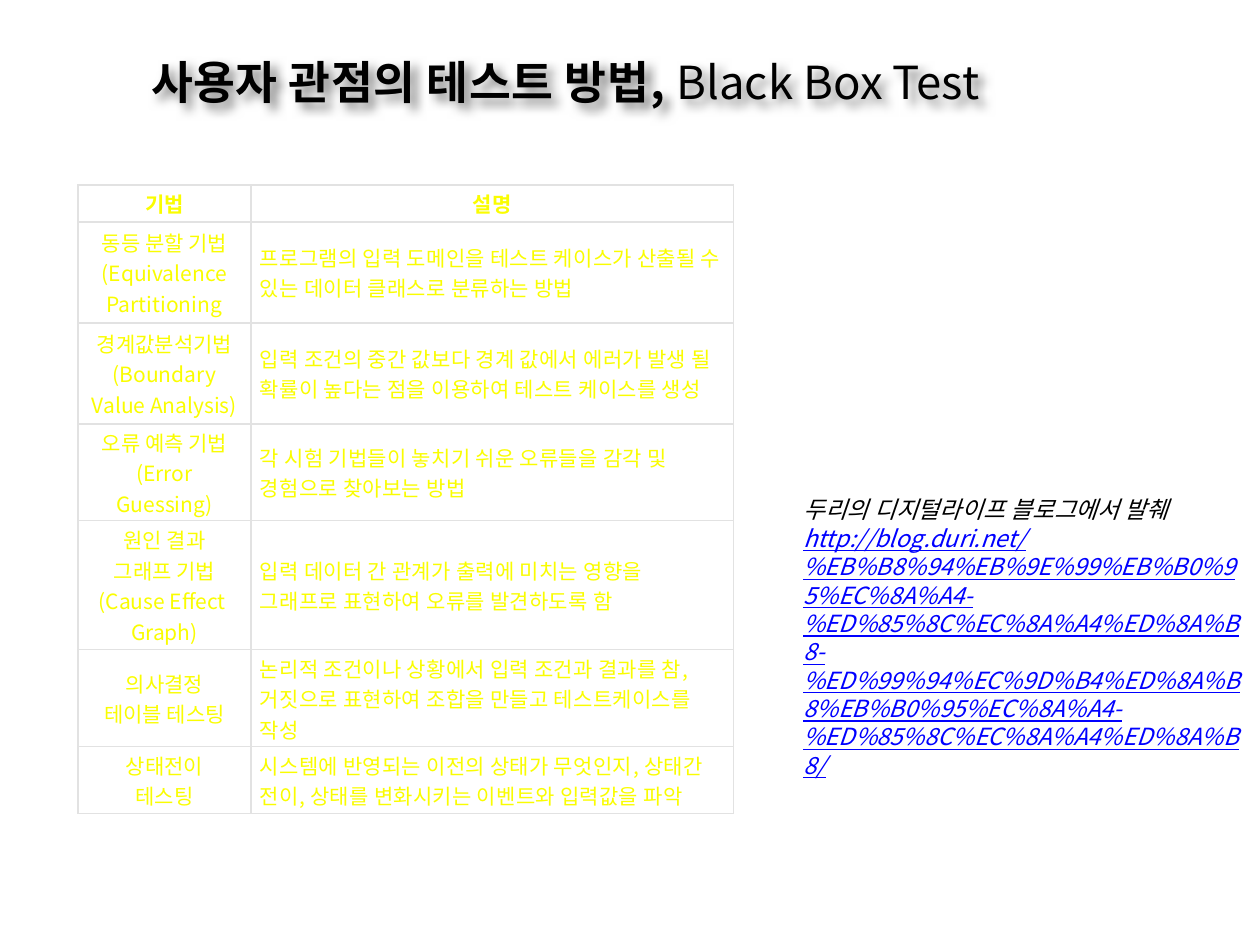
from dataclasses import dataclass

from lxml import etree
from pptx import Presentation
from pptx import util as u
from pptx.dml.color import RGBColor
from pptx.enum import text
from pptx.oxml import ns

PX = 914400 / 126
FONT = "Noto Sans CJK KR"
BLACK, YELLOW, BLUE, WHITE, BORDER = "000000", "FAFD00", "0000FF", "FFFFFF", "E2E2E2"
CENTER, LEFT = text.PP_ALIGN.CENTER, text.PP_ALIGN.LEFT


@dataclass
class Technique:
    name: str
    description: str
    height: int
    heading: bool = False


TECHNIQUES = [
    Technique("기법", "설명", 37, heading=True),
    Technique("동등 분할 기법\n(Equivalence\nPartitioning",
              "프로그램의 입력 도메인을 테스트 케이스가 산출될 수 있는 데이터 클래스로 분류하는 방법", 101),
    Technique("경계값분석기법\n(Boundary\nValue Analysis)",
              "입력 조건의 중간 값보다 경계 값에서 에러가 발생 될 확률이 높다는 점을 이용하여 테스트 케이스를 생성", 101),
    Technique("오류 예측 기법\n(Error Guessing)",
              "각 시험 기법들이 놓치기 쉬운 오류들을 감각 및 경험으로 찾아보는 방법", 97),
    Technique("원인 결과\n그래프 기법\n(Cause Effect \nGraph)",
              "입력 데이터 간 관계가 출력에 미치는 영향을 그래프로 표현하여 오류를 발견하도록 함", 129),
    Technique("의사결정\n테이블 테스팅",
              "논리적 조건이나 상황에서 입력 조건과 결과를 참, 거짓으로 표현하여 조합을 만들고 테스트케이스를 작성", 97),
    Technique("상태전이\n테스팅",
              "시스템에 반영되는 이전의 상태가 무엇인지, 상태간 전이, 상태를 변화시키는 이벤트와 입력값을 파악", 67),
]
COLUMNS = [173, 483]
SOURCE_URL = (
    "http://blog.duri.net/\n%EB%B8%94%EB%9E%99%EB%B0%95%EC%8A%A4-"
    "%ED%85%8C%EC%8A%A4%ED%8A%B8-%ED%99%94%EC%9D%B4%ED%8A%B8%EB%B0%95%EC%8A%A4-"
    "%ED%85%8C%EC%8A%A4%ED%8A%B8/"
)


def px(length: int) -> u.Emu:
    return u.Emu(round(length * PX))


def color(value: str) -> RGBColor:
    return RGBColor.from_string(value)


def write(para, words: str, *, size: float, fill: str = BLACK, bold: bool = False,
          italic: bool = False, underline: bool = False, tracking: int = 0) -> None:
    for index, line in enumerate(words.split("\n")):
        if index:
            para.add_line_break()
        span = para.add_run()
        span.text = line
        font = span.font
        font.name, font.size = FONT, u.Pt(size)
        font.bold, font.italic, font.underline = bold, italic, underline
        font.color.rgb = color(fill)
        font._element.set("spc", str(tracking))
        east_asian = etree.SubElement(font._element, ns.qn("a:ea"))
        east_asian.set("typeface", FONT)


def add_box(page, left: int, top: int, width: int, height: int, anchor):
    box = page.shapes.add_textbox(px(left), px(top), px(width), px(height))
    box.text_frame.word_wrap = True
    box.text_frame.vertical_anchor = anchor
    return box


def add_shadow(box) -> None:
    effects = etree.SubElement(box._element.spPr, ns.qn("a:effectLst"))
    shadow = etree.SubElement(effects, ns.qn("a:outerShdw"), blurRad="76200",
                              dist="50800", dir="2700000", algn="tl", rotWithShape="0")
    shade = etree.SubElement(shadow, ns.qn("a:srgbClr"), val=BLACK)
    etree.SubElement(shade, ns.qn("a:alpha"), val="50000")


def add_borders(cell) -> None:
    properties = cell._tc.get_or_add_tcPr()
    for index, side in enumerate(("lnL", "lnR", "lnT", "lnB")):
        line = etree.Element(ns.qn(f"a:{side}"), w=str(u.Pt(0.75)))
        fill = etree.SubElement(line, ns.qn("a:solidFill"))
        etree.SubElement(fill, ns.qn("a:srgbClr"), val=BORDER)
        properties.insert(index, line)


def fill_cell(cell, words: str, align, bold: bool, tracking: int = 0) -> None:
    cell.fill.solid()
    cell.fill.fore_color.rgb = color(WHITE)
    cell.vertical_anchor = text.MSO_ANCHOR.MIDDLE
    cell.margin_left = cell.margin_right = px(9)
    cell.margin_top = cell.margin_bottom = px(3)
    para = cell.text_frame.paragraphs[0]
    para.alignment = align
    write(para, words, size=12, fill=YELLOW, bold=bold, tracking=tracking)
    add_borders(cell)


def add_title(page) -> None:
    box = add_box(page, 60, 34, 1011, 95, text.MSO_ANCHOR.MIDDLE)
    add_shadow(box)
    para = box.text_frame.paragraphs[0]
    para.alignment = CENTER
    write(para, "사용자 관점의 테스트 방법, ", size=26, bold=True, tracking=28)
    write(para, "Black Box Test", size=26)


def add_techniques(page) -> None:
    height = sum(technique.height for technique in TECHNIQUES)
    table = page.shapes.add_table(len(TECHNIQUES), len(COLUMNS), px(78), px(185),
                                  px(sum(COLUMNS)), px(height)).table
    table.first_row = table.horz_banding = False
    for column, width in zip(table.columns, COLUMNS):
        column.width = px(width)
    for row, technique in zip(table.rows, TECHNIQUES):
        row.height = px(technique.height)
        name, description = row.cells
        fill_cell(name, technique.name, CENTER, technique.heading)
        fill_cell(description, technique.description,
                  CENTER if technique.heading else LEFT, technique.heading, tracking=17)


def add_source(page) -> None:
    box = add_box(page, 791, 489, 469, 299, text.MSO_ANCHOR.TOP)
    para = box.text_frame.paragraphs[0]
    para.line_spacing = u.Pt(16.2)
    write(para, "두리의 디지털라이프 블로그에서 발췌", size=13.5, italic=True, tracking=12)
    write(para, SOURCE_URL, size=13.5, fill=BLUE, italic=True, underline=True)


def main() -> None:
    deck = Presentation()
    deck.slide_width, deck.slide_height = px(1260), px(945)
    page = deck.slides.add_slide(deck.slide_layouts[6])
    add_title(page)
    add_techniques(page)
    add_source(page)
    deck.save("out.pptx")


if __name__ == "__main__":
    main()
